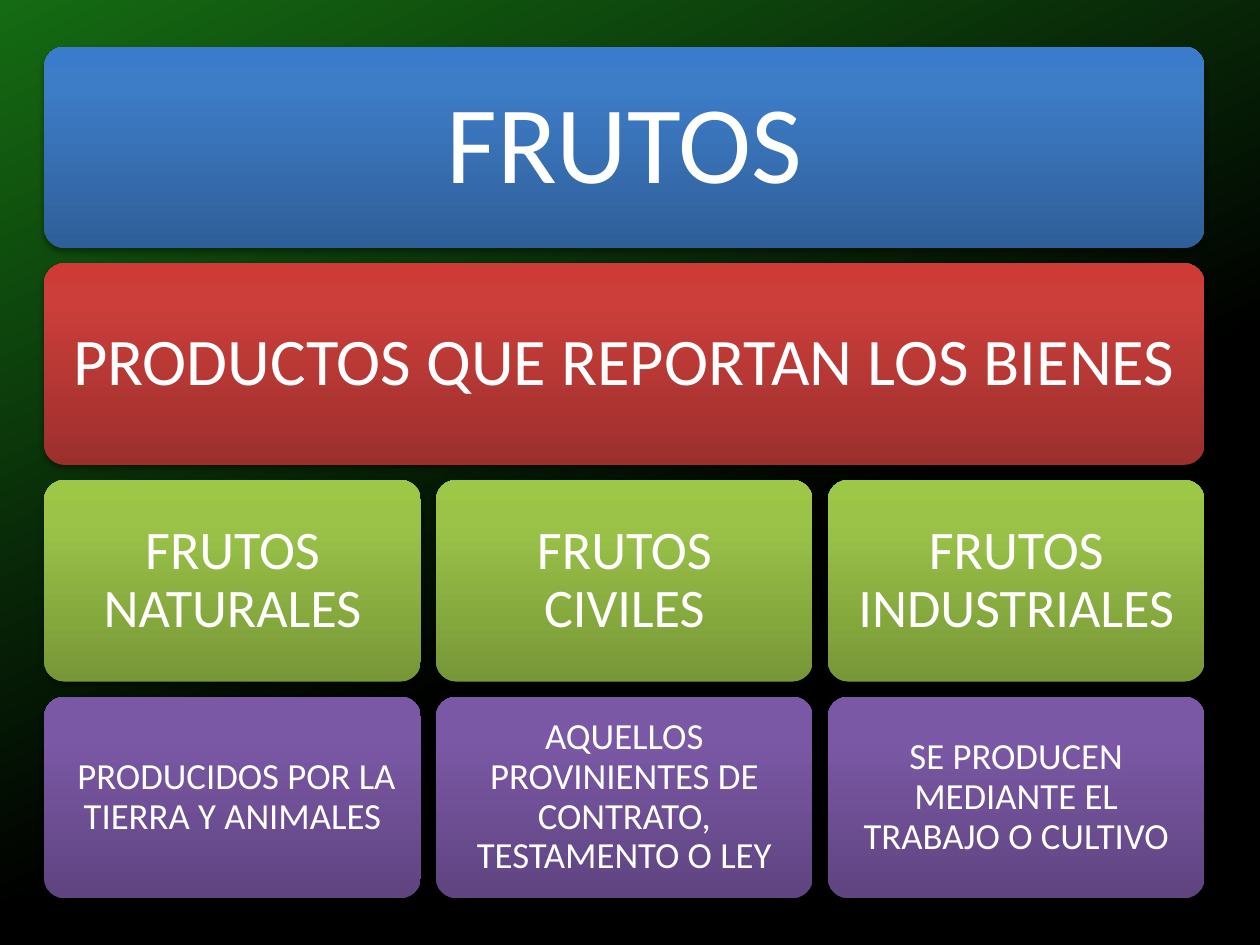
from dataclasses import dataclass

from lxml import etree
from pptx import Presentation
from pptx.dml.color import RGBColor
from pptx.enum import shapes, text
from pptx.oxml.ns import qn
from pptx.util import Inches, Pt

# Gradient colours from bottom to top
HUES = {
    "blue": ("2F5F99", "3D7CC7", "3A7CCB"),
    "red": ("9C2F2D", "CB3E3A", "CE3B37"),
    "green": ("779737", "9BC348", "9DC746"),
    "purple": ("5F4480", "7B58A6", "7C57A8"),
}
COLORS = {"text": "FFFFFF", "shadow": "000000", "dark": "000000", "leaf": "156B13"}
STOPS = (0, 80, 100)

# Grid in inches
LEFT, TOP, WIDTH = 0.35, 0.37, 9.21
HEIGHT, GAP = 1.6, 0.12


@dataclass
class Row:
    hue: str
    size: int
    inset: float
    labels: tuple[str, ...]
    dist: float = 1.6
    alpha: int = 38


ROWS = [
    Row("blue", 63, 0.26, ("FRUTOS",), 1.8, 35),
    Row("red", 38, 0.16, ("PRODUCTOS QUE REPORTAN LOS BIENES",)),
    Row("green", 31, 0.13,
        ("FRUTOS NATURALES", "FRUTOS CIVILES", "FRUTOS INDUSTRIALES")),
    Row("purple", 21, 0.09,
        (" PRODUCIDOS POR LA TIERRA Y ANIMALES",
         "AQUELLOS PROVINIENTES DE CONTRATO, TESTAMENTO O LEY",
         "SE PRODUCEN MEDIANTE EL TRABAJO O CULTIVO")),
]


def add(parent, tag: str, **attrs):
    return etree.SubElement(parent, qn(tag), {k: str(v) for k, v in attrs.items()})


def blend(fill, holder, stops, angle: int) -> None:
    """Give a fill any number of gradient stops; the angle runs clockwise."""
    fill.gradient()
    grad = next(holder.iter(qn("a:gradFill")))
    items = grad.find(qn("a:gsLst"))
    for old in list(items):
        items.remove(old)
    for pos, color in stops:
        add(add(items, "a:gs", pos=pos * 1000), "a:srgbClr", val=color)
    grad.find(qn("a:lin")).set("ang", str(angle * 60000))


def shade(box, row: Row) -> None:
    box.shadow.inherit = False
    effects = box._element.spPr.find(qn("a:effectLst"))
    outer = add(effects, "a:outerShdw", blurRad=Pt(3.1), dist=Pt(row.dist),
                dir=90 * 60000, rotWithShape=0)
    color = add(outer, "a:srgbClr", val=COLORS["shadow"])
    add(color, "a:alpha", val=row.alpha * 1000)


def draw(slide, row: Row, label: str, x: float, y: float, width: float) -> None:
    box = slide.shapes.add_shape(
        shapes.MSO_SHAPE.ROUNDED_RECTANGLE,
        Inches(x), Inches(y), Inches(width), Inches(HEIGHT))
    box.adjustments[0] = 0.1
    blend(box.fill, box._element.spPr, zip(STOPS, HUES[row.hue]), 270)
    box.line.fill.background()
    shade(box, row)

    frame = box.text_frame
    frame.word_wrap = True
    frame.vertical_anchor = text.MSO_ANCHOR.MIDDLE
    frame.margin_left = frame.margin_right = Inches(row.inset)
    frame.margin_top = frame.margin_bottom = Inches(row.inset)
    frame.text = label
    para = frame.paragraphs[0]
    para.alignment = text.PP_ALIGN.CENTER
    para.line_spacing = 0.9
    para.font.name = "Calibri"
    para.font.size = Pt(row.size)
    para.font.color.rgb = RGBColor.from_string(COLORS["text"])


def main() -> None:
    deck = Presentation()
    deck.slide_width, deck.slide_height = Inches(10), Inches(7.5)
    slide = deck.slides.add_slide(deck.slide_layouts[6])

    # Background
    blend(slide.background.fill, slide._element,
          [(40, COLORS["dark"]), (100, COLORS["leaf"])], 245)

    # Rows of boxes, each row split evenly
    for i, row in enumerate(ROWS):
        count = len(row.labels)
        width = (WIDTH - GAP * (count - 1)) / count
        for j, label in enumerate(row.labels):
            draw(slide, row, label, LEFT + j * (width + GAP),
                 TOP + i * (HEIGHT + GAP), width)

    deck.save("out.pptx")


if __name__ == "__main__":
    main()
